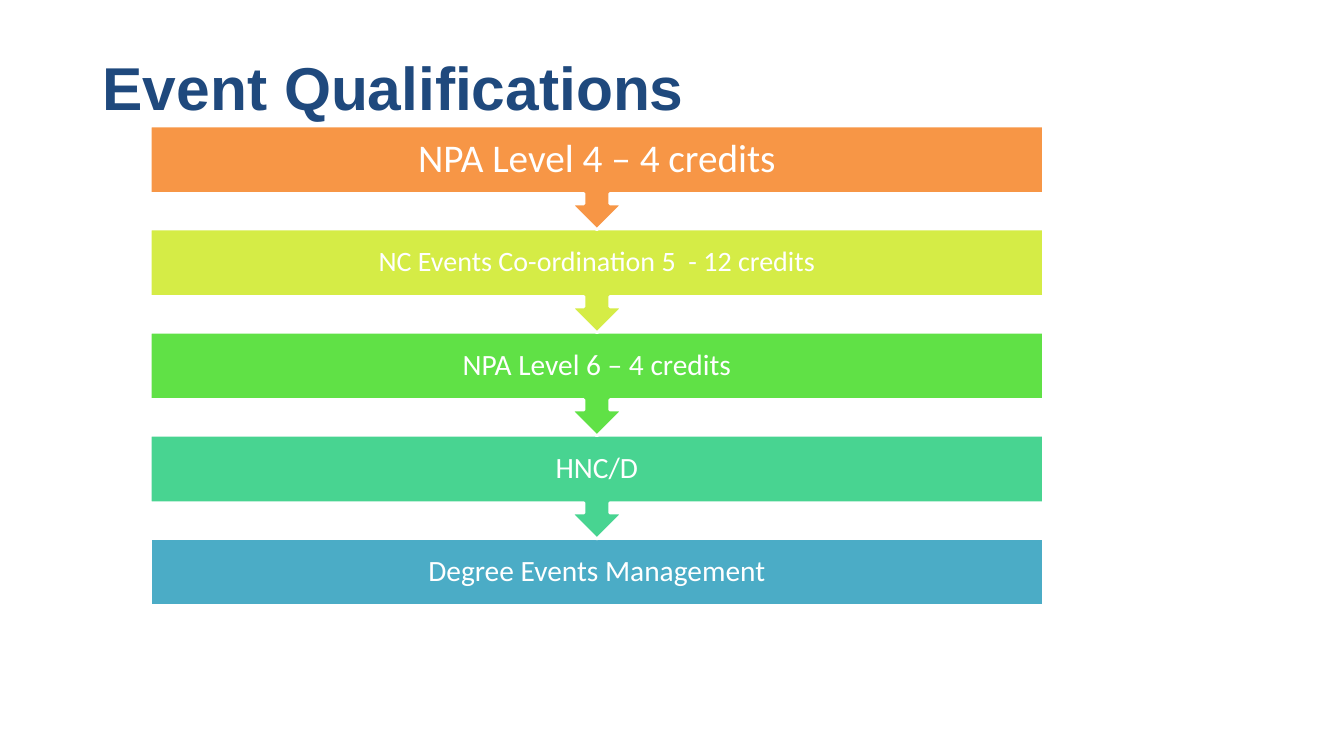
from dataclasses import dataclass

from pptx import Presentation
from pptx.dml.color import RGBColor
from pptx.enum.shapes import MSO_SHAPE
from pptx.enum.text import MSO_ANCHOR, PP_ALIGN
from pptx.slide import Slide
from pptx.util import Inches, Pt

RECTANGLE = MSO_SHAPE.RECTANGLE
CALLOUT = MSO_SHAPE.UP_ARROW_CALLOUT
TOP, MIDDLE = MSO_ANCHOR.TOP, MSO_ANCHOR.MIDDLE
LEFT, CENTER = PP_ALIGN.LEFT, PP_ALIGN.CENTER

WHITE, NAVY = "FFFFFF", "1F497D"
FLOW_LEFT, FLOW_TOP, FLOW_WIDTH = 1.49, 1.25, 8.86
BAR_HEIGHT, CALLOUT_HEIGHT = 0.67, 1.03
STEP_PITCH = 1.0225


@dataclass
class Step:
    label: str
    fill: str
    size: float = 21
    inset: float = 0.16


@dataclass
class Area:
    left: float
    top: float
    width: float
    height: float

    def lengths(self) -> list[int]:
        return [Inches(n) for n in (self.left, self.top, self.width, self.height)]


STEPS = [
    Step("NPA Level 4 – 4 credits", "F79646", 28, 0.22),
    Step("NC Events Co-ordination 5  - 12 credits", "D5EC46", 20),
    Step("NPA Level 6 – 4 credits", "60E146"),
    Step("HNC/D", "48D491"),
    Step("Degree Events Management", "4BACC6"),
]


def color(value: str) -> RGBColor:
    return RGBColor.from_string(value)


def add_text(page: Slide, area: Area, text: str, font: str, size: float,
             ink: str, inset: float, bold: bool = False,
             align: PP_ALIGN = CENTER, anchor: MSO_ANCHOR = MIDDLE,
             spacing: float = 0.9) -> None:
    frame = page.shapes.add_textbox(*area.lengths()).text_frame
    frame.word_wrap = True
    frame.vertical_anchor = anchor
    frame.margin_left = frame.margin_right = Inches(inset)
    frame.margin_top = frame.margin_bottom = Inches(inset)
    para = frame.paragraphs[0]
    para.alignment = align
    para.line_spacing = spacing
    span = para.add_run()
    span.text = text
    span.font.name = font
    span.font.size = Pt(size)
    span.font.bold = bold
    span.font.color.rgb = color(ink)


def add_step(page: Slide, step: Step, top: float, last: bool) -> None:
    height = BAR_HEIGHT if last else CALLOUT_HEIGHT
    area = Area(FLOW_LEFT, top, FLOW_WIDTH, height)
    box = page.shapes.add_shape(RECTANGLE if last else CALLOUT, *area.lengths())
    box.rotation = 0 if last else 180
    box.shadow.inherit = False
    box.fill.solid()
    box.fill.fore_color.rgb = color(step.fill)
    box.line.color.rgb = color(WHITE)
    box.line.width = Pt(2)
    # The label stays upright in the bar, apart from the turned callout
    add_text(page, Area(FLOW_LEFT, top, FLOW_WIDTH, BAR_HEIGHT), step.label,
             "Calibri", step.size, WHITE, step.inset)


def main() -> None:
    deck = Presentation()
    deck.slide_width, deck.slide_height = Inches(13.33), Inches(7.5)
    page = deck.slides.add_slide(deck.slide_layouts[6])

    # Title
    add_text(page, Area(0.92, 0.4, 11.5, 1.45), "Event Qualifications", "Arial",
             43.2, NAVY, 0.1, bold=True, align=LEFT, anchor=TOP, spacing=1.0)

    # Flow of qualifications, drawn from the last step up
    for index, step in reversed(list(enumerate(STEPS))):
        add_step(page, step, FLOW_TOP + index * STEP_PITCH, index == len(STEPS) - 1)

    deck.save("out.pptx")


if __name__ == "__main__":
    main()
